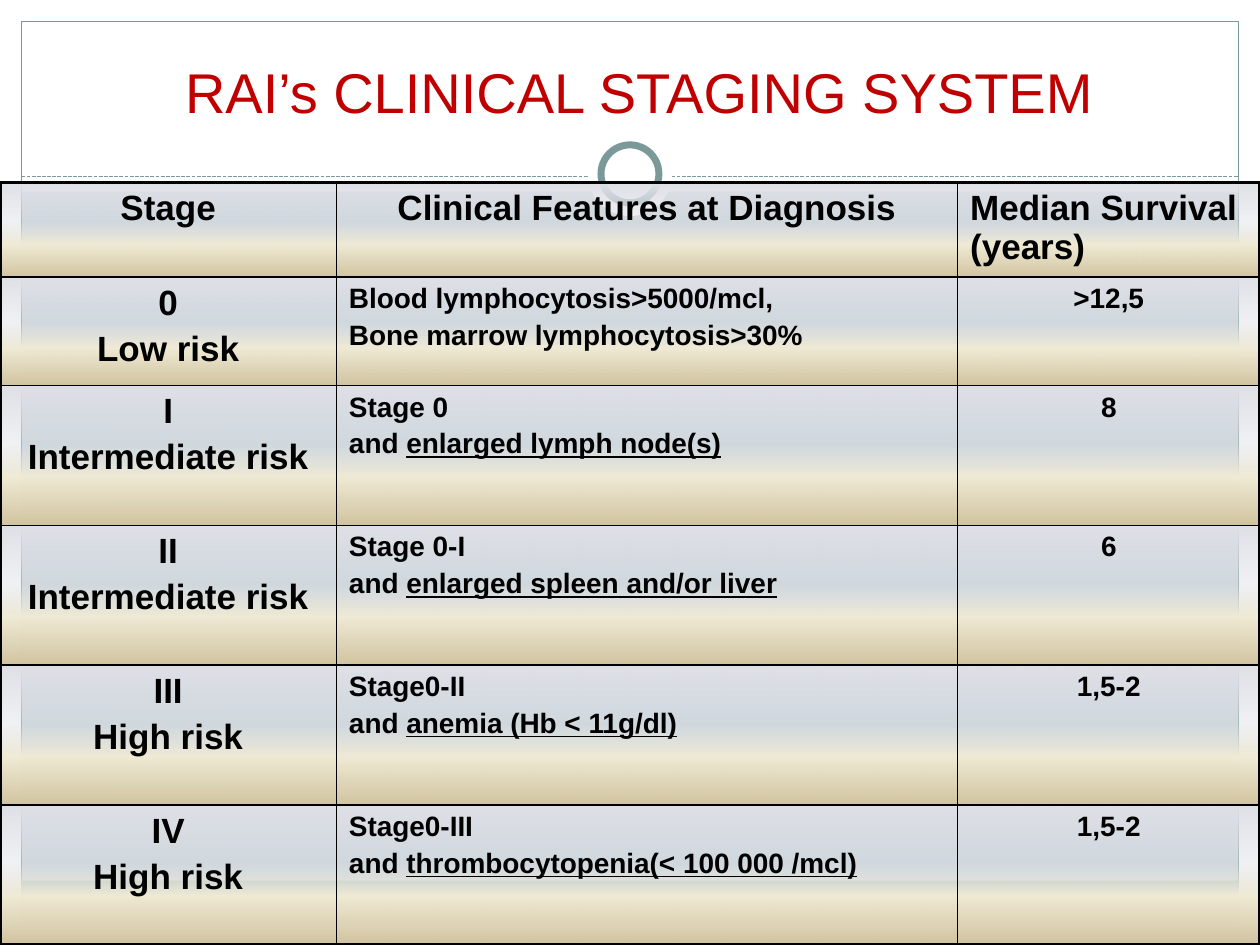
import pptx
import pptx.dml.color
import pptx.enum.dml
import pptx.enum.shapes
import pptx.enum.text
import pptx.oxml
import pptx.oxml.ns
import pptx.util

Inches = pptx.util.Inches
Pt = pptx.util.Pt
RGBColor = pptx.dml.color.RGBColor
SHAPE = pptx.enum.shapes.MSO_SHAPE
ALIGN = pptx.enum.text.PP_ALIGN

BACKGROUND = RGBColor(0xC5, 0xD1, 0xD7)
WHITE = RGBColor(0xFF, 0xFF, 0xFF)
BAND = RGBColor(0x8C, 0xAD, 0xAE)
FRAME = RGBColor(0x7C, 0x99, 0x9A)
TITLE = RGBColor(0xC0, 0x00, 0x00)
BLACK = RGBColor(0x00, 0x00, 0x00)
CELL_TOP = RGBColor(0xDF, 0xE1, 0xE7)
CELL_LOW = RGBColor(0xF0, 0xEB, 0xD5)
CELL_END = RGBColor(0xD1, 0xC3, 0x9F)
STOPS = [(0, CELL_TOP, 100), (41, CELL_TOP, 44), (65, CELL_LOW, 100), (100, CELL_END, 100)]

FONT = "Arial"
COLUMNS = [2.67, 4.93, 2.4]
ROWS = [0.75, 0.86] + [1.11] * 4
HEADER = ["Stage", "Clinical Features at Diagnosis", "Median Survival (years)"]
STAGES = [
    ("0", "Low risk", "Blood lymphocytosis>5000/mcl,", "Bone marrow lymphocytosis>30%", "", ">12,5"),
    ("I", "Intermediate risk", "Stage 0", "and ", "enlarged lymph node(s)", "8"),
    ("II", "Intermediate risk", "Stage 0-I", "and ", "enlarged spleen and/or liver", "6"),
    ("III", "High risk", "Stage0-II", "and ", "anemia (Hb < 11g/dl)", "1,5-2"),
    ("IV", "High risk", "Stage0-III", "and ", "thrombocytopenia(< 100 000 /mcl)", "1,5-2"),
]


def set_attributes(obj, values):
    for name, value in values.items():
        setattr(obj, name, value)


def add_run(p, text, size, color, **values):
    r = p.add_run()
    r.text = text
    set_attributes(r.font, {"name": FONT, "size": Pt(size), **values})
    r.font.color.rgb = color


def add_element(parent, tag, **values):
    return pptx.oxml.ns.qn(tag) and parent.makeelement(pptx.oxml.ns.qn(tag), values)


def append(parent, tag, **values):
    child = add_element(parent, tag, **values)
    parent.append(child)
    return child


def add_plain(s, kind, box, fill=None, line=None, width=0.75):
    sp = s.shapes.add_shape(kind, *map(Inches, box))
    sp.shadow.inherit = False
    if fill is None:
        sp.fill.background()
    else:
        sp.fill.solid()
        sp.fill.fore_color.rgb = fill
    if line is None:
        sp.line.fill.background()
    else:
        sp.line.color.rgb = line
        sp.line.width = Pt(width)


def add_frame(s, width, height, margin):
    inner = width - 2 * margin
    bottom = height - margin
    for box in [
        (0, bottom, width, margin),
        (0, 0, width, 1.52),
        (0, 0, margin, height),
        (width - margin, 0, margin, height),
    ]:
        add_plain(s, SHAPE.RECTANGLE, box, WHITE)
    add_plain(s, SHAPE.RECTANGLE, (margin, bottom - 0.34, inner, 0.34), BAND)
    add_plain(s, SHAPE.RECTANGLE, (margin, margin, inner, bottom - margin), line=FRAME)

    ends = (margin, 1.4, width - margin, 1.4)
    rule = s.shapes.add_connector(pptx.enum.shapes.MSO_CONNECTOR.STRAIGHT, *map(Inches, ends))
    rule.line.color.rgb = FRAME
    set_attributes(rule.line, {
        "width": Pt(0.75),
        "dash_style": pptx.enum.dml.MSO_LINE.SQUARE_DOT,
    })
    append(rule._element.spPr, "a:effectLst")

    for size, line in [(0.67, None), (0.46, FRAME)]:
        box = ((width - size) / 2, 1.38 - size / 2, size, size)
        add_plain(s, SHAPE.OVAL, box, WHITE, line, 4)


def add_title(s, box, text):
    title = s.shapes.title
    s.shapes._spTree.append(title._element)
    set_attributes(title, dict(zip(("left", "top", "width", "height"), map(Inches, box))))
    tf = title.text_frame
    set_attributes(tf, {"vertical_anchor": pptx.enum.text.MSO_ANCHOR.BOTTOM, "word_wrap": True})
    p = tf.paragraphs[0]
    p.alignment = ALIGN.CENTER
    add_run(p, text, 32, TITLE)


def style_cell(cell, edges):
    tcPr = cell._tc.get_or_add_tcPr()
    for side in "LRTB":
        width = Pt(2.25 if side in edges else 1)
        ln = append(tcPr, f"a:ln{side}", w=str(width))
        append(append(ln, "a:solidFill"), "a:srgbClr", val=str(BLACK))
    grad = append(tcPr, "a:gradFill", rotWithShape="1")
    stops = append(grad, "a:gsLst")
    for position, color, opacity in STOPS:
        stop = append(stops, "a:gs", pos=str(position * 1000))
        clr = append(stop, "a:srgbClr", val=str(color))
        if opacity < 100:
            append(clr, "a:alpha", val=str(opacity * 1000))
    append(grad, "a:lin", ang="5400000", scaled="0")


def write_cell(cell, lines, size, alignment):
    tf = cell.text_frame
    for i, runs in enumerate(lines):
        p = tf.add_paragraph() if i else tf.paragraphs[0]
        set_attributes(p, {"alignment": alignment, "space_before": Pt(size * 0.2)})
        for text, underline in runs:
            if text:
                add_run(p, text, size, BLACK, bold=True, underline=underline)


def add_staging_table(s, box):
    table = s.shapes.add_table(len(ROWS), len(COLUMNS), *map(Inches, box)).table
    set_attributes(table, {"first_row": False, "horz_banding": False})
    for column, width in zip(table.columns, COLUMNS):
        column.width = Inches(width)
    for row, height in zip(table.rows, ROWS):
        row.height = Inches(height)

    last_row, last_column = len(ROWS) - 1, len(COLUMNS) - 1
    for i in range(len(ROWS)):
        for j in range(len(COLUMNS)):
            at_edge = {"L": j == 0, "R": j == last_column, "T": i == 0, "B": i == last_row}
            style_cell(table.cell(i, j), [side for side in at_edge if at_edge[side]])

    for j, text in enumerate(HEADER):
        alignment = ALIGN.LEFT if j == last_column else ALIGN.CENTER
        write_cell(table.cell(0, j), [[(text, False)]], 20, alignment)
    for i, (stage, risk, first, second, finding, survival) in enumerate(STAGES, 1):
        write_cell(table.cell(i, 0), [[(stage, False)], [(risk, False)]], 20, ALIGN.CENTER)
        features = [[(first, False)], [(second, False), (finding, True)]]
        write_cell(table.cell(i, 1), features, 16, ALIGN.LEFT)
        write_cell(table.cell(i, 2), [[(survival, False)]], 16, ALIGN.CENTER)


def main():
    prs = pptx.Presentation()
    set_attributes(prs, {"slide_width": Inches(10), "slide_height": Inches(7.5)})
    s = prs.slides.add_slide(prs.slide_layouts[5])
    s.background.fill.solid()
    s.background.fill.fore_color.rgb = BACKGROUND
    add_frame(s, 10, 7.5, 0.17)
    add_title(s, (0.51, 0, 9.13, 1.04), "RAI’s CLINICAL STAGING SYSTEM")
    add_staging_table(s, (0, 1.45, 10, 6.05))
    prs.save("out.pptx")


if __name__ == "__main__":
    main()
